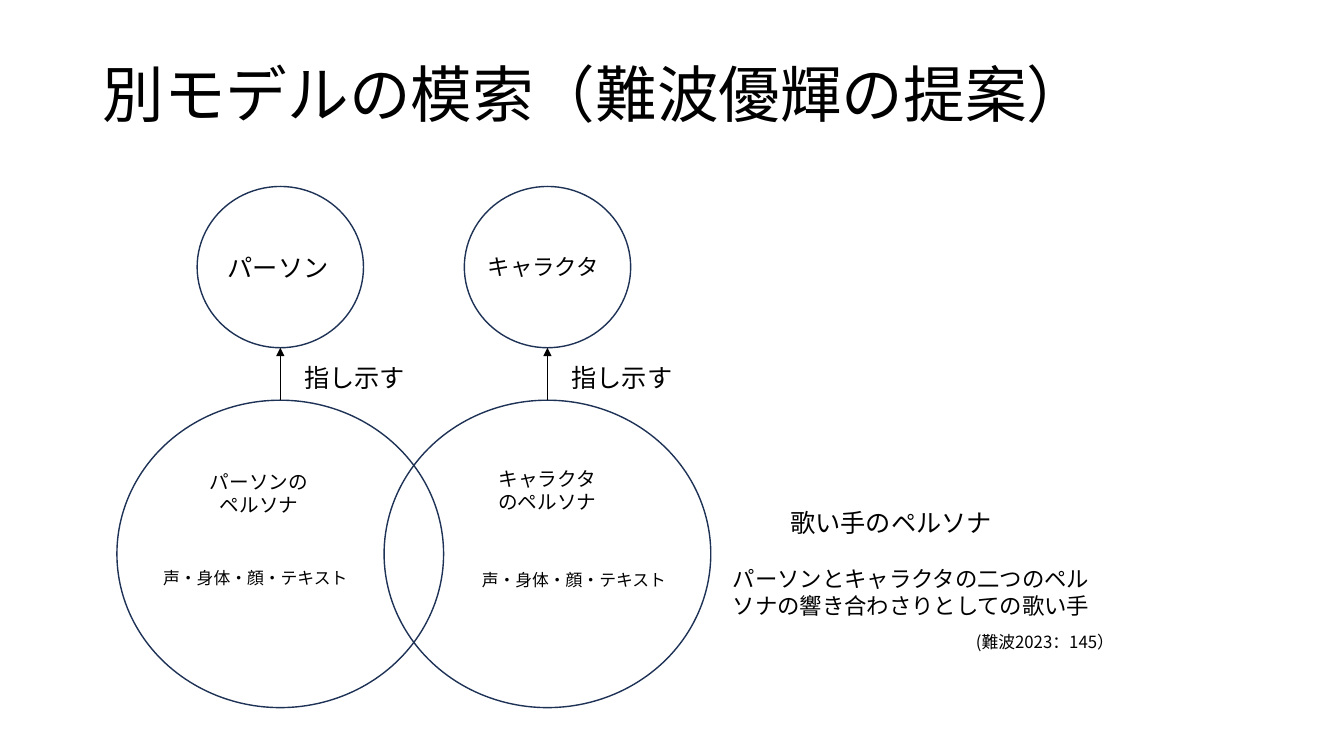
"""Build the slide on the two overlapping personas of a singer."""
from lxml import etree
from pptx import Presentation
from pptx.dml.color import RGBColor
from pptx.enum.shapes import MSO_CONNECTOR, MSO_SHAPE
from pptx.enum.text import MSO_ANCHOR, PP_ALIGN
from pptx.oxml.ns import qn
from pptx.util import Inches, Pt

BLACK = RGBColor(0x00, 0x00, 0x00)
NAVY = RGBColor(0x1E, 0x32, 0x56)
FONT = "Noto Sans CJK JP"
LEFT, CENTER = PP_ALIGN.LEFT, PP_ALIGN.CENTER
TOP, MIDDLE = MSO_ANCHOR.TOP, MSO_ANCHOR.MIDDLE
OVAL, STRAIGHT = MSO_SHAPE.OVAL, MSO_CONNECTOR.STRAIGHT

TITLE = ("別モデルの模索（難波優輝の提案）", 0.92, 0.4, 11.5, 1.13, 44)
LABELS = [
    ("パーソン", 2.16, 2.45, 1.23, 0.4, 18, LEFT),
    ("パーソンのペルソナ", 1.95, 4.61, 1.24, 0.57, 14, CENTER),
    ("声・身体・顔・テキスト", 1.52, 5.58, 2.08, 0.3, 12, LEFT),
    ("キャラクタ", 4.74, 2.46, 1.33, 0.37, 16, LEFT),
    ("キャラクタのペルソナ", 4.81, 4.58, 1.24, 0.57, 14, CENTER),
    ("声・身体・顔・テキスト", 4.68, 5.6, 2.08, 0.3, 12, LEFT),
    ("歌い手のペルソナ", 7.74, 4.98, 2.69, 0.4, 18, LEFT),
    ("パーソンとキャラクタの二つのペルソナの響き合わさりとしての歌い手",
     7.17, 5.56, 3.83, 0.64, 16, LEFT),
    ("(難波2023：145）", 9.58, 6.22, 2.28, 0.3, 12, LEFT),
]
ARROW_LABEL = "指し示す"
COLUMN_CENTERS = [2.78, 5.43]
SMALL_CIRCLE = (1.85, 1.65, 1.6)
LARGE_CIRCLE = (3.97, 3.24, 3.05)


def add_text(slide, text, left, top, width, height, size,
             alignment=LEFT, anchor=TOP, spacing=1.0):
    box = slide.shapes.add_textbox(
        Inches(left), Inches(top), Inches(width), Inches(height))
    frame = box.text_frame
    frame.word_wrap = True
    frame.vertical_anchor = anchor
    paragraph = frame.paragraphs[0]
    paragraph.text = text
    paragraph.alignment = alignment
    paragraph.line_spacing = spacing
    font = paragraph.font
    font.name = FONT
    font.size = Pt(size)
    font.color.rgb = BLACK
    properties = paragraph._p.pPr.find(qn("a:defRPr"))
    etree.SubElement(properties, qn("a:ea"), typeface=FONT)


def add_circle(slide, center, top, width, height):
    circle = slide.shapes.add_shape(
        OVAL, Inches(center - width / 2), Inches(top), Inches(width), Inches(height))
    circle.shadow.inherit = False
    circle.fill.background()
    circle.line.color.rgb = NAVY
    circle.line.width = Pt(1)


def add_arrow(slide, center, start, end):
    arrow = slide.shapes.add_connector(
        STRAIGHT, Inches(center), Inches(start), Inches(center), Inches(end))
    arrow.line.color.rgb = BLACK
    arrow.line.width = Pt(1)
    etree.SubElement(arrow.line._get_or_add_ln(), qn("a:tailEnd"), type="triangle")
    etree.SubElement(arrow._element.spPr, qn("a:effectLst"))


def main():
    presentation = Presentation()
    presentation.slide_width = Inches(13.33)
    presentation.slide_height = Inches(7.5)
    slide = presentation.slides.add_slide(presentation.slide_layouts[6])

    add_text(slide, *TITLE, anchor=MIDDLE, spacing=0.9)
    small_bottom = SMALL_CIRCLE[0] + SMALL_CIRCLE[2]
    for center in COLUMN_CENTERS:
        add_circle(slide, center, *SMALL_CIRCLE)
        add_circle(slide, center, *LARGE_CIRCLE)
        add_arrow(slide, center, LARGE_CIRCLE[0], small_bottom)
        add_text(slide, ARROW_LABEL, center + 0.14, small_bottom + 0.1, 1.37, 0.4, 18)
    for label in LABELS:
        add_text(slide, *label)

    presentation.save("out.pptx")


if __name__ == "__main__":
    main()
